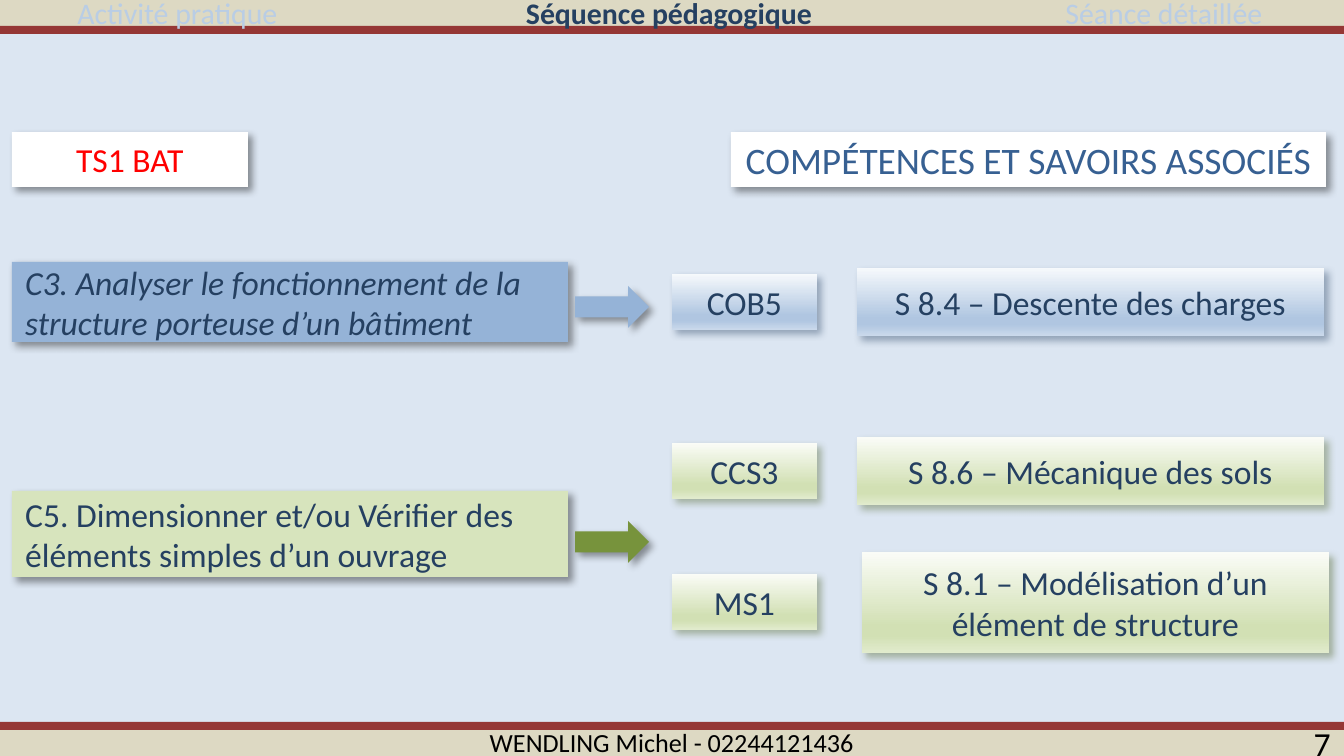
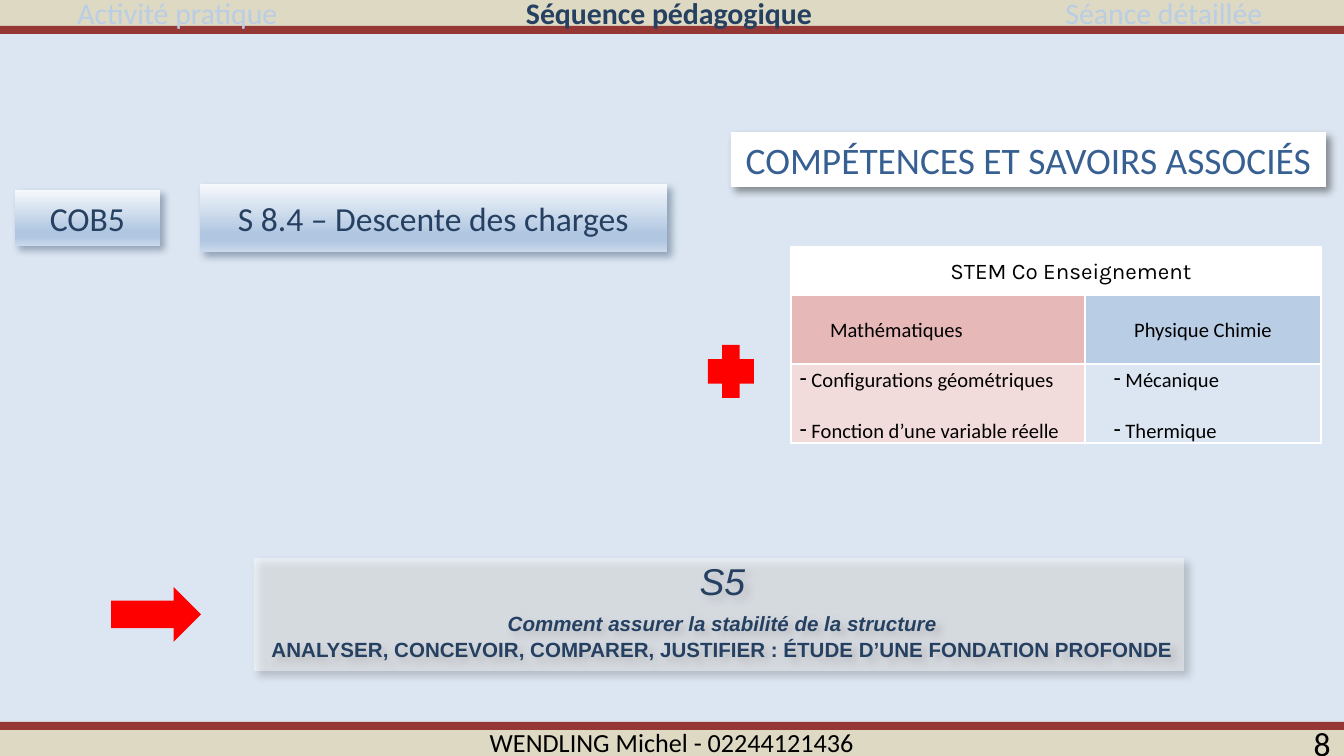
from lxml.etree import SubElement
from pptx import Presentation
from pptx.dml.color import RGBColor
from pptx.enum.shapes import MSO_SHAPE
from pptx.enum.text import MSO_ANCHOR, PP_ALIGN
from pptx.oxml.ns import qn
from pptx.util import Pt

EMU_PER_PX = 914400 / 134.4
W, H = 1344, 756

NAVY, PALE_BLUE, BLUE, SKY = "254061", "DCE6F2", "95B3D7", "B9CDE5"
SAND, BRICK, TITLE_BLUE = "DDD9C3", "953735", "376092"
LIME, OLIVE, RED, BLACK, WHITE = "D7E4BD", "77933C", "FF0000", "000000", "FFFFFF"
ROSE, PALE_ROSE = "E6B9B8", "F2DCDB"

# Gradient colours at 0, 74, 83 and 100 %, then the shadow colour
BLUE_TILE = (("F6F9FC", "B0C6E1", "B0C6E1", "CAD9EB"), "254061")
GREEN_TILE = (("FAFCF7", "D2E0B4", "D2E0B4", "E1EBCD"), "4F6228")
STOPS = (0, 74, 83, 100)

LEFT, CENTER, RIGHT, JUSTIFY = (
    PP_ALIGN.LEFT, PP_ALIGN.CENTER, PP_ALIGN.RIGHT, PP_ALIGN.JUSTIFY)
TOP, MIDDLE = MSO_ANCHOR.TOP, MSO_ANCHOR.MIDDLE


def px(n):
    return round(n * EMU_PER_PX)


def rgb(color):
    return RGBColor.from_string(color)


def add_color(parent, color, alpha=None):
    clr = SubElement(parent, qn("a:srgbClr"), val=color)
    if alpha is not None:
        SubElement(clr, qn("a:alpha"), val=str(alpha * 1000))


def set_gradient(sp, colors):
    sp.fill.gradient()
    sp.fill.gradient_angle = 270
    stops = sp._element.spPr.find(qn("a:gradFill")).find(qn("a:gsLst"))
    stops.clear()
    for pos, color in zip(STOPS, colors):
        add_color(SubElement(stops, qn("a:gs"), pos=str(pos * 1000)), color)


def set_shadow(sp, color):
    effects = sp._element.spPr.find(qn("a:effectLst"))
    outer = SubElement(effects, qn("a:outerShdw"), blurRad=str(Pt(4)),
                       dist=str(Pt(3)), dir="2700000", algn="tl", rotWithShape="0")
    add_color(outer, color, 40)


def add_block(slide, box, fill, shadow=None, kind=MSO_SHAPE.RECTANGLE):
    """Add a borderless shape; fill is one colour or a tuple of gradient colours."""
    sp = slide.shapes.add_shape(kind, *map(px, box))
    if isinstance(fill, tuple):
        set_gradient(sp, fill)
    else:
        sp.fill.solid()
        sp.fill.fore_color.rgb = rgb(fill)
    sp.line.fill.background()
    sp.shadow.inherit = False
    if shadow:
        set_shadow(sp, shadow)
    return sp


def write(p, text, size, color, font="Calibri", bold=False, italic=False, align=CENTER):
    p.alignment = align
    r = p.add_run()
    r.text = text
    r.font.name, r.font.size = font, Pt(size)
    r.font.bold, r.font.italic = bold, italic
    r.font.color.rgb = rgb(color)


def add_label(slide, box, text, fill, shadow=BLACK, size=18, color=NAVY, **style):
    tf = add_block(slide, box, fill, shadow).text_frame
    tf.word_wrap = True
    tf.vertical_anchor = MIDDLE
    write(tf.paragraphs[0], text, size, color, **style)


def add_text(slide, box, text, size, color, **style):
    tf = slide.shapes.add_textbox(*map(px, box)).text_frame
    tf.word_wrap = True
    write(tf.paragraphs[0], text, size, color, **style)


def add_frame(slide, number):
    """Background, bands, navigation titles and footer."""
    slide.background.fill.solid()
    slide.background.fill.fore_color.rgb = rgb(PALE_BLUE)
    band, rule = 26, 8
    for y, h, color in ((0, band, SAND), (H - band, band, SAND),
                        (band, rule, BRICK), (H - band - rule, rule, BRICK)):
        add_block(slide, (0, y, W, h), color)
    add_text(slide, (1230, 716, 114, 40), str(number), 18, BLACK, align=RIGHT)
    for x, w, text, current in ((0, 355, "Activité pratique", False),
                                (456, 426, "Séquence pédagogique", True),
                                (984, 360, "Séance détaillée", False)):
        add_text(slide, (x, -12, w, 50), text, 16, NAVY if current else SKY, bold=current)
    add_text(slide, (0, 720, W, 40), "WENDLING Michel - 02244121436", 14, BLACK)


def add_heading(slide):
    add_label(slide, (731, 132, 595, 55), "COMPÉTENCES ET SAVOIRS ASSOCIÉS",
              WHITE, size=20, color=TITLE_BLUE)


def add_competence(slide, box, text, fill, arrow_fill, arrow_drop, italic=False):
    """Competence box followed by an arrow set arrow_drop below its middle."""
    x, y, w, h = box
    add_label(slide, box, text, fill, align=LEFT, italic=italic)
    arrow_h = 42
    arrow_y = y + h // 2 + arrow_drop - arrow_h // 2
    add_block(slide, (x + w + 7, arrow_y, 74, arrow_h), arrow_fill, BLACK,
              MSO_SHAPE.RIGHT_ARROW)


def add_knowledge(slide, x, middle, code, topic, tile, topic_dx=185, topic_h=68):
    """Code tile and topic tile, both centred on the height middle."""
    fill, shadow = tile
    for left, w, h, text in ((x, 145, 56, code), (x + topic_dx, 467, topic_h, topic)):
        add_label(slide, (left, middle - h // 2, w, h), text, fill, shadow)


def set_indent(p, left, first=0):
    pPr = p._p.get_or_add_pPr()
    pPr.set("marL", str(px(left)))
    pPr.set("indent", str(px(first)))
    return pPr


def style_cell(cell, fill, anchor, bottom=1):
    cell.margin_left = cell.margin_right = px(9)
    cell.margin_top = cell.margin_bottom = 0
    cell.vertical_anchor = anchor
    tcPr = cell._tc.get_or_add_tcPr()
    for side, width in (("L", 1), ("R", 1), ("T", 1), ("B", bottom)):
        ln = SubElement(tcPr, qn(f"a:ln{side}"), w=str(Pt(width)))
        add_color(SubElement(ln, qn("a:solidFill")), WHITE)
    cell.fill.solid()
    cell.fill.fore_color.rgb = rgb(fill)


def fill_header(cell, text, fill, size=11, font="Calibri", align=CENTER, left=0, bottom=1):
    style_cell(cell, fill, MIDDLE, bottom)
    p = cell.text_frame.paragraphs[0]
    p.line_spacing = 1.15
    set_indent(p, left)
    write(p, text, size, BLACK, font, align=align)


def fill_list(cell, items, fill, aligns, left, first=0):
    style_cell(cell, fill, TOP)
    tf = cell.text_frame
    for i, (text, align) in enumerate(zip(items, aligns)):
        p = tf.add_paragraph() if i else tf.paragraphs[0]
        p.line_spacing = 1.15
        p.space_before = p.space_after = Pt(6)
        SubElement(set_indent(p, left, first), qn("a:buChar"), char="-")
        write(p, " " + text, 11, BLACK, align=align)


def add_stem_table(slide, x, y):
    cols, rows = (294, 236), (47, 70, 79)
    table = slide.shapes.add_table(3, 2, *map(px, (x, y, sum(cols), sum(rows)))).table
    table.first_row = table.horz_banding = False
    for col, w in zip(table.columns, cols):
        col.width = px(w)
    for row, h in zip(table.rows, rows):
        row.height = px(h)
    cell = table.cell
    cell(0, 0).merge(cell(0, 1))
    fill_header(cell(0, 0), "STEM Co Enseignement", WHITE, 12, "Karla", left=30, bottom=3)
    style_cell(cell(0, 1), WHITE, MIDDLE, bottom=3)
    fill_header(cell(1, 0), "Mathématiques", ROSE, align=JUSTIFY, left=30)
    fill_header(cell(1, 1), "Physique Chimie", SKY)
    fill_list(cell(2, 0), ("Configurations géométriques", "Fonction d’une variable réelle"),
              PALE_ROSE, (JUSTIFY, LEFT), 1, -1)
    fill_list(cell(2, 1), ("Mécanique", "Thermique"), PALE_BLUE, (JUSTIFY, JUSTIFY), 20)


def add_session(slide, box):
    """Translucent panel with the session question, and the arrow leading to it."""
    x, y, w, h = box
    add_block(slide, (x - 143, y + 29, 90, 55), RED, kind=MSO_SHAPE.RIGHT_ARROW)
    sp = add_block(slide, box, WHITE, BLACK)
    clr = sp._element.spPr.find(qn("a:solidFill")).find(qn("a:srgbClr"))
    SubElement(clr, qn("a:alpha"), val="43000")
    tf = sp.text_frame
    tf.word_wrap = True
    tf.vertical_anchor = TOP
    tf.margin_left = tf.margin_top = tf.margin_right = tf.margin_bottom = 0
    lines = (
        ("S5", 20, False, True, 4.2),
        ("Comment assurer la stabilité de la structure", 11, True, True, 4.2),
        ("ANALYSER, CONCEVOIR, COMPARER, JUSTIFIER : ÉTUDE D’UNE FONDATION PROFONDE",
         11, True, False, 0.8),
    )
    for i, (text, size, bold, italic, before) in enumerate(lines):
        p = tf.add_paragraph() if i else tf.paragraphs[0]
        p.space_before = Pt(before)
        set_indent(p, 7)
        write(p, text, size, NAVY, "Arial", bold, italic)


def build_competences(slide):
    add_frame(slide, 7)
    add_label(slide, (12, 132, 236, 55), "TS1 BAT", WHITE, color=RED)
    add_heading(slide)
    add_competence(slide, (12, 262, 556, 80),
                   "C3. Analyser le fonctionnement de la structure porteuse d’un bâtiment",
                   BLUE, BLUE, 5, italic=True)
    add_competence(slide, (12, 491, 556, 86),
                   "C5. Dimensionner et/ou Vérifier des éléments simples d’un ouvrage",
                   LIME, OLIVE, 8)
    add_knowledge(slide, 672, 302, "COB5", "S 8.4 – Descente des charges", BLUE_TILE)
    add_knowledge(slide, 672, 471, "CCS3", "S 8.6 – Mécanique des sols", GREEN_TILE)
    add_knowledge(slide, 672, 602, "MS1", "S 8.1 – Modélisation d’un élément de structure",
                  GREEN_TILE, topic_dx=190, topic_h=101)


def build_session(slide):
    add_frame(slide, 8)
    add_knowledge(slide, 15, 218, "COB5", "S 8.4 – Descente des charges", BLUE_TILE)
    add_session(slide, (254, 558, 930, 113))
    add_stem_table(slide, 791, 247)
    plus = add_block(slide, (708, 345, 46, 53), RED, kind=MSO_SHAPE.CROSS)
    plus.adjustments[0] = 0.31
    add_heading(slide)


def main():
    prs = Presentation()
    prs.slide_width, prs.slide_height = px(W), px(H)
    for build in (build_competences, build_session):
        build(prs.slides.add_slide(prs.slide_layouts[6]))
    prs.save("out.pptx")


if __name__ == "__main__":
    main()
